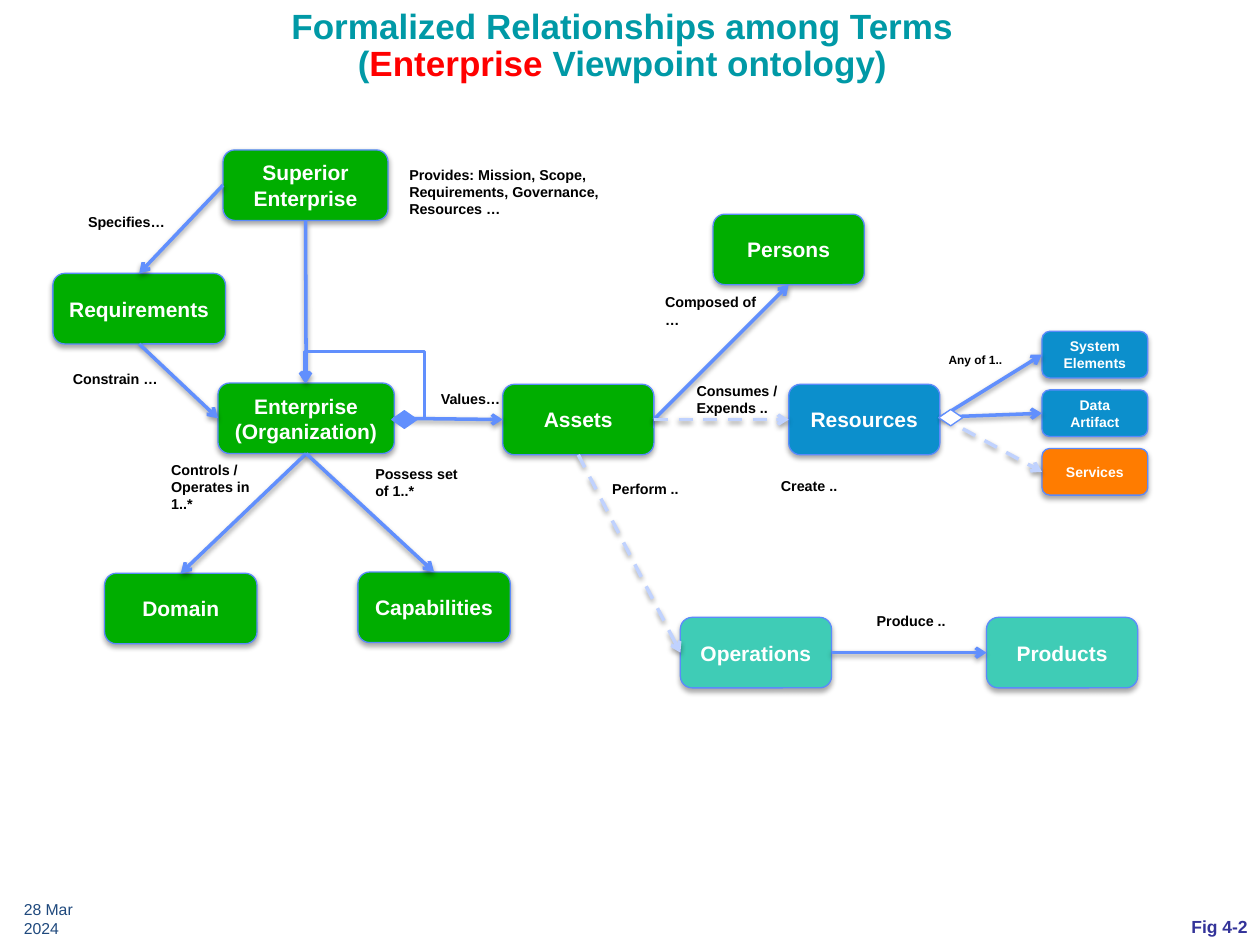
from lxml import etree
from pptx import Presentation
from pptx.dml.color import RGBColor
from pptx.enum import dml, shapes, text
from pptx.oxml import ns
from pptx.util import Inches, Pt

COLORS = {
    "teal": "0099A6", "red": "FF0000", "green": "00AE00", "blue": "0C8FCC",
    "mint": "3FCCB6", "orange": "FF7C00", "border": "5B8AFB", "arrow": "618FFD",
    "faint": "C0D2FE", "white": "FFFFFF", "black": "000000", "navy": "1F497D",
    "indigo": "333399",
}
TOP, LEFT, BOTTOM, RIGHT = range(4)

BOXES = {
    "Superior\nEnterprise": (1.77, 1.19, 1.31, "green"),
    "Requirements": (0.42, 2.17, 1.37, "green"),
    "Enterprise\n(Organization)": (1.73, 3.04, 1.4, "green"),
    "Domain": (0.83, 4.55, 1.21, "green"),
    "Capabilities": (2.84, 4.54, 1.21, "green"),
    "Assets": (3.99, 3.05, 1.2, "green"),
    "Persons": (5.66, 1.7, 1.2, "green"),
    "Resources": (6.26, 3.05, 1.2, "blue"),
    "Operations": (5.4, 4.9, 1.2, "mint"),
    "Products": (7.83, 4.9, 1.2, "mint"),
}
RESOURCE_KINDS = [("System Elements", "blue"), ("Data\nArtifact", "blue"), ("Services", "orange")]

RELATIONS = [
    ("Superior\nEnterprise", BOTTOM, "Enterprise\n(Organization)", TOP, False),
    ("Superior\nEnterprise", LEFT, "Requirements", TOP, False),
    ("Requirements", BOTTOM, "Enterprise\n(Organization)", LEFT, False),
    ("Enterprise\n(Organization)", BOTTOM, "Domain", TOP, False),
    ("Enterprise\n(Organization)", BOTTOM, "Capabilities", TOP, False),
    ("Enterprise\n(Organization)", RIGHT, "Assets", LEFT, False),
    ("Assets", RIGHT, "Persons", BOTTOM, False),
    ("Assets", RIGHT, "Resources", LEFT, True),
    ("Assets", BOTTOM, "Operations", LEFT, True),
    ("Operations", RIGHT, "Products", LEFT, False),
]

WRAPPED_LABELS = [
    ("Provides: Mission, Scope, Requirements, Governance, Resources …", 3.15, 1.27, 1.8, 0.52),
    ("Specifies…", 0.6, 1.64, 0.95, 0.24),
    ("Constrain …", 0.48, 2.89, 0.95, 0.24),
    ("Values…", 3.4, 3.05, 0.95, 0.24),
    ("Composed of …", 5.18, 2.28, 0.95, 0.38),
    ("Consumes / Expends ..", 5.43, 2.98, 0.87, 0.38),
    ("Controls / Operates in 1..*", 1.26, 3.61, 0.91, 0.52),
    ("Possess set of 1..*", 2.88, 3.64, 0.91, 0.38),
]
ONE_LINE_LABELS = [
    ("Perform ..", 4.76, 3.76, 0.74, 0.24),
    ("Create ..", 6.1, 3.74, 0.66, 0.24),
    ("Produce ..", 6.86, 4.81, 0.76, 0.24),
]


def rgb(name):
    return RGBColor.from_string(COLORS[name])


def set_font(font, size, color, bold=True):
    font.name, font.size, font.bold = "Arial", Pt(size), bold
    font.color.rgb = rgb(color)


def child(parent, tag, **attributes):
    return etree.SubElement(parent, ns.qn(tag), attributes)


def add_drop_shadow(effects, distance, opacity):
    shadow = child(effects, "a:outerShdw", blurRad=str(Pt(3.1)), dist=str(Pt(distance)),
                   dir="5400000", rotWithShape="0")
    tint = child(shadow, "a:srgbClr", val=COLORS["black"])
    child(tint, "a:alpha", val=str(opacity * 1000))


def add_box(slide, caption, left, top, width, height, color, size):
    box = slide.shapes.add_shape(shapes.MSO_SHAPE.ROUNDED_RECTANGLE, Inches(left),
                                 Inches(top), Inches(width), Inches(height))
    box.fill.solid()
    box.fill.fore_color.rgb = rgb(color)
    box.line.color.rgb = rgb("border")
    box.line.width = Pt(0.75)
    box.shadow.inherit = False
    add_drop_shadow(box._element.spPr.find(ns.qn("a:effectLst")), 1.8, 35)
    frame = box.text_frame
    frame.text = caption
    frame.word_wrap = True
    frame.vertical_anchor = text.MSO_ANCHOR.MIDDLE
    for paragraph in frame.paragraphs:
        paragraph.alignment = text.PP_ALIGN.CENTER
        set_font(paragraph.font, size, "white")
    return box


def add_arrow(slide, start, end, kind=shapes.MSO_CONNECTOR.STRAIGHT, dashed=False, shadowed=True):
    arrow = slide.shapes.add_connector(kind, *(Inches(v) for v in (*start, *end)))
    arrow.line.color.rgb = rgb("faint" if dashed else "arrow")
    arrow.line.width = Pt(2)
    if dashed:
        arrow.line.dash_style = dml.MSO_LINE.DASH
    properties = arrow._element.spPr
    child(properties.find(ns.qn("a:ln")), "a:tailEnd", type="arrow")
    effects = child(properties, "a:effectLst")
    if shadowed:
        add_drop_shadow(effects, 1.6, 38)
    return arrow


def add_self_loop(slide):
    loop = add_arrow(slide, (3.12, 3.32), (2.42, 3.04), shapes.MSO_CONNECTOR.ELBOW, shadowed=False)
    geometry = loop._element.spPr.find(ns.qn("a:prstGeom"))
    geometry.set("prst", "bentConnector4")
    guides = geometry.find(ns.qn("a:avLst"))
    for name, value in (("adj1", -35800), ("adj2", 188900)):
        child(guides, "a:gd", name=name, fmla=f"val {value}")


def add_diamond(slide, left, top, width, height, color):
    diamond = slide.shapes.add_shape(shapes.MSO_SHAPE.FLOWCHART_DECISION, Inches(left),
                                     Inches(top), Inches(width), Inches(height))
    diamond.fill.solid()
    diamond.fill.fore_color.rgb = rgb(color)
    diamond.line.color.rgb = rgb("arrow")
    diamond.line.width = Pt(0.75)
    diamond.shadow.inherit = False


def add_label(slide, caption, left, top, width, height, size=8.2, color="black",
              bold=True, wrap=True, anchor=text.MSO_ANCHOR.TOP, align=text.PP_ALIGN.LEFT):
    label = slide.shapes.add_textbox(Inches(left), Inches(top), Inches(width), Inches(height))
    frame = label.text_frame
    frame.word_wrap = wrap
    frame.vertical_anchor = anchor
    paragraph = frame.paragraphs[0]
    paragraph.text = caption
    paragraph.alignment = align
    set_font(paragraph.font, size, color, bold)


def add_title(slide):
    title = slide.shapes.title
    title.left, title.top, title.width, title.height = (Inches(v) for v in (0.44, 0.02, 9, 0.84))
    title.text_frame.vertical_anchor = text.MSO_ANCHOR.TOP
    heading = title.text_frame.paragraphs[0]
    heading.alignment = text.PP_ALIGN.CENTER
    heading.line_spacing = 0.9
    set_font(heading.font, 20, "teal")
    heading.add_run().text = "Formalized Relationships among Terms"
    heading.add_line_break()
    for words, color in (("(", "teal"), ("Enterprise", "red"), (" Viewpoint ontology)", "teal")):
        run = heading.add_run()
        run.text = words
        set_font(run.font, 20, color)


def main():
    prs = Presentation()
    prs.slide_width, prs.slide_height = Inches(10), Inches(7.5)
    slide = prs.slides.add_slide(prs.slide_layouts[5])
    add_title(slide)

    terms = {name: add_box(slide, name, left, top, width, 0.56, color, 12)
             for name, (left, top, width, color) in BOXES.items()}
    for source, source_side, target, target_side, dashed in RELATIONS:
        arrow = add_arrow(slide, (0, 0), (1, 1), dashed=dashed)
        arrow.begin_connect(terms[source], source_side)
        arrow.end_connect(terms[target], target_side)
    add_self_loop(slide)

    for row, (name, color) in enumerate(RESOURCE_KINDS):
        kind = add_box(slide, name, 8.27, 2.63 + row * 0.465, 0.84, 0.37, color, 8)
        arrow = add_arrow(slide, (7.47, 3.31), (8.27, 3.31), dashed=name == "Services")
        arrow.end_connect(kind, LEFT)

    add_diamond(slide, 7.45, 3.25, 0.19, 0.13, "white")
    add_diamond(slide, 3.11, 3.26, 0.2, 0.14, "arrow")

    for label in WRAPPED_LABELS:
        add_label(slide, *label)
    for label in ONE_LINE_LABELS:
        add_label(slide, *label, wrap=False)
    add_label(slide, "Any of 1..", 7.43, 2.75, 0.7, 0.21, size=6.8)
    add_label(slide, "28 Mar 2024", 0.09, 7.15, 0.81, 0.28, size=9, color="navy", bold=False,
              wrap=False, anchor=text.MSO_ANCHOR.MIDDLE)
    add_label(slide, "Fig 4-2", 8.11, 7.21, 1.89, 0.29, size=10, color="indigo",
              anchor=text.MSO_ANCHOR.MIDDLE, align=text.PP_ALIGN.RIGHT)
    prs.save("out.pptx")


if __name__ == "__main__":
    main()
